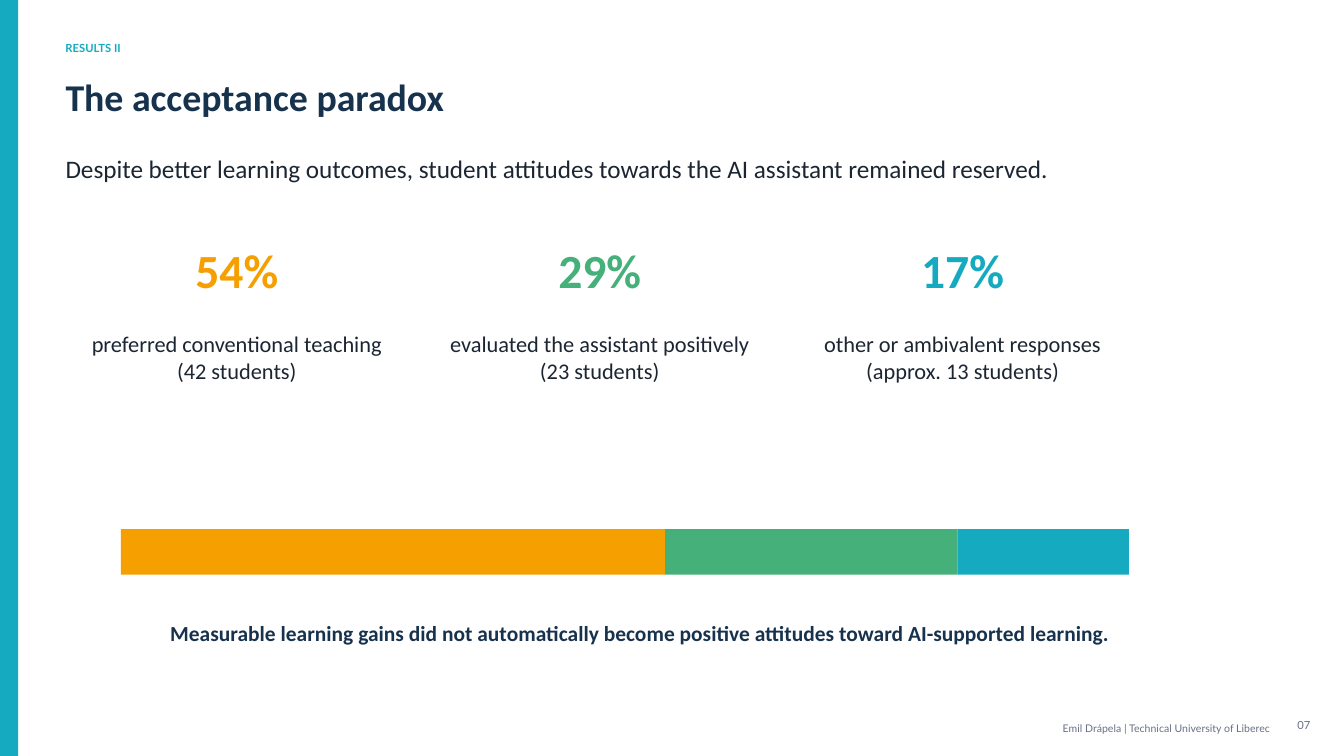
from pptx import Presentation
from pptx.dml.color import RGBColor
from pptx.enum.shapes import MSO_SHAPE
from pptx.enum.text import MSO_ANCHOR, MSO_AUTO_SIZE, PP_ALIGN
from pptx.util import Pt

RECT = MSO_SHAPE.RECTANGLE
MIDDLE = MSO_ANCHOR.MIDDLE
NO_FIT = MSO_AUTO_SIZE.NONE
LEFT, CENTER, RIGHT = PP_ALIGN.LEFT, PP_ALIGN.CENTER, PP_ALIGN.RIGHT

TEAL = RGBColor(0x15, 0xAA, 0xBF)
ORANGE = RGBColor(0xF5, 0x9F, 0x00)
GREEN = RGBColor(0x45, 0xB0, 0x7A)
NAVY = RGBColor(0x17, 0x32, 0x4D)
INK = RGBColor(0x1C, 0x26, 0x33)
GRAY = RGBColor(0x66, 0x70, 0x85)

KICKER = {"name": "Lato", "size": Pt(8), "bold": True}
TITLE = {"name": "Calibri", "size": Pt(27), "bold": True}
LEAD = {"name": "Calibri", "size": Pt(18), "bold": False}
FIGURE = {"name": "Calibri", "size": Pt(34), "bold": True}
LABEL = {"name": "Calibri", "size": Pt(16), "bold": False}
TAKEAWAY = {"name": "Calibri", "size": Pt(15.3), "bold": True}
FOOTER = {"name": "Lato", "size": Pt(7.5), "bold": False}
NUMBER = {"name": "Lato", "size": Pt(8), "bold": False}

prs = Presentation()
prs.slide_width, prs.slide_height = Pt(960), Pt(540)
s = prs.slides.add_slide(prs.slide_layouts[5])


def add_bar(x, y, w, h, color):
    sp = s.shapes.add_shape(RECT, Pt(x), Pt(y), Pt(w), Pt(h))
    sp.shadow.inherit = False
    sp.fill.solid()
    sp.fill.fore_color.rgb = color
    sp.line.fill.background()


def write(box, lines, fmt, color, align=LEFT, sp=None):
    x, y, w, h = map(Pt, box)
    if sp is None:
        sp = s.shapes.add_textbox(x, y, w, h)
    sp.left, sp.top, sp.width, sp.height = x, y, w, h
    tf = sp.text_frame
    tf.text = "\n".join(lines)
    tf.word_wrap = True
    tf.auto_size = NO_FIT
    tf.vertical_anchor = MIDDLE
    tf.margin_left = tf.margin_top = tf.margin_right = tf.margin_bottom = 0
    for p in tf.paragraphs:
        p.alignment = align
        for r in p.runs:
            r.font.color.rgb = color
            for key, value in fmt.items():
                setattr(r.font, key, value)


add_bar(0, 0, 13, 540, TEAL)
write((46.8, 25.2, 201.6, 18), ["RESULTS II"], KICKER, TEAL)
write((46.8, 49, 626.4, 39.6), ["The acceptance paradox"], TITLE, NAVY, sp=s.shapes.title)
write((46.8, 97.2, 831.6, 46.8),
      ["Despite better learning outcomes, student attitudes towards the AI assistant remained reserved."],
      LEAD, INK)

responses = [
    (54, ORANGE, ["preferred conventional teaching", "(42 students)"]),
    (29, GREEN, ["evaluated the assistant positively", "(23 students)"]),
    (17, TEAL, ["other or ambivalent responses", "(approx. 13 students)"]),
]
bar_x = 86.4
for i, (percent, color, label) in enumerate(responses):
    x = 61.2 + i * 259.2
    write((x, 169.2, 216, 46.8), [f"{percent}%"], FIGURE, color, CENTER)
    write((x, 218.2, 216, 73.4), label, LABEL, INK, CENTER)
    bar_w = percent * 7.2
    add_bar(bar_x, 378, bar_w, 32.4, color)
    bar_x += bar_w

write((97.2, 435.6, 720, 32.4),
      ["Measurable learning gains did not automatically become positive attitudes toward AI-supported learning."],
      TAKEAWAY, NAVY, CENTER)
write((630, 512.6, 277.2, 15.8), ["Emil Drápela | Technical University of Liberec"], FOOTER, GRAY, RIGHT)
write((910.8, 509.8, 25.2, 15.8), ["07"], NUMBER, GRAY, RIGHT)

prs.save("out.pptx")
